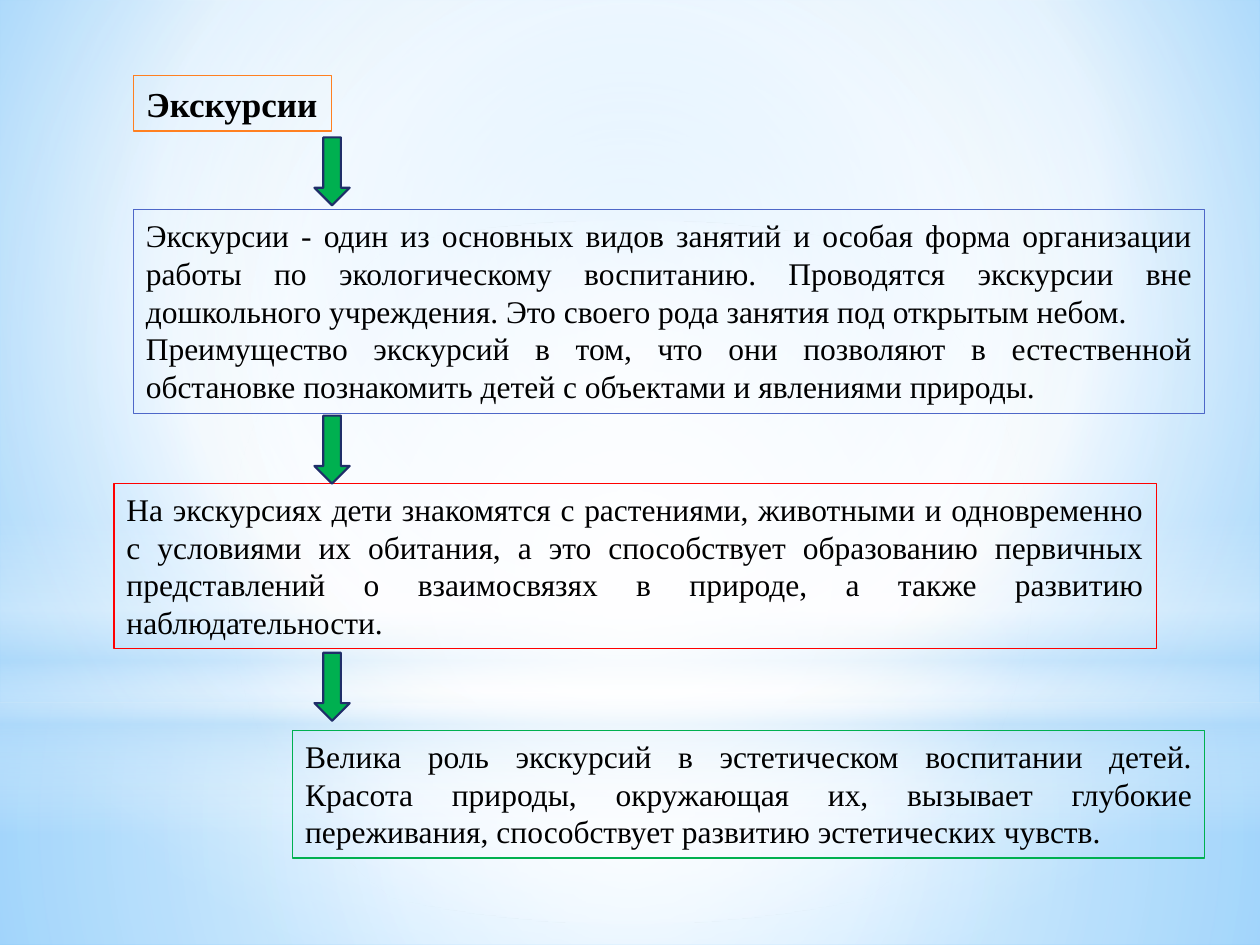
from dataclasses import dataclass

from lxml.etree import SubElement
from pptx import Presentation
from pptx.dml.color import RGBColor
from pptx.enum.shapes import MSO_SHAPE
from pptx.enum.text import MSO_ANCHOR, MSO_AUTO_SIZE, PP_ALIGN
from pptx.oxml.ns import qn
from pptx.util import Cm, Pt

FONT = "Times New Roman"
WIDTH, HEIGHT = 25.4, 19.05
ARROW_LEFT, ARROW_WIDTH, ARROW_HEIGHT = 6.34, 0.71, 1.37
ARROW_TOPS = (2.77, 8.38, 13.16)
CENTRE = (50, 50, 50, 50)


@dataclass
class Gradient:
    stops: list[tuple]  # position, colour and opacity, in percent
    focus: tuple | None = CENTRE  # None makes it linear, top to bottom


@dataclass
class Glow:
    shape: MSO_SHAPE
    top: float
    height: float
    gradient: Gradient


@dataclass
class Box:
    left: float
    top: float
    width: float
    height: float
    line: str
    paragraphs: list[str]


BACKGROUND = Gradient([(0, "9ED5FF", 100), (60, "FFFFFF", 100), (100, "5BB9FF", 100)],
                      (20, 10, 20, 60))

GLOWS = [
    Glow(MSO_SHAPE.RECTANGLE, 14.17, 4.88,
         Gradient([(0, "FFFFFF", 91), (37, "FFFFFF", 76), (100, "B4DCFA", 79)])),
    Glow(MSO_SHAPE.RECTANGLE, 0, 14.17,
         Gradient([(0, "FFFFFF", 89), (48, "FFFFFF", 62), (100, "B4DCFA", 79)])),
    Glow(MSO_SHAPE.RECTANGLE, 10.46, 6.35,
         Gradient([(0, "FFFFFF", 0), (29, "FFFFFF", 30), (45, "B4DCFA", 40),
                   (55, "FFFFFF", 26), (65, "B4DCFA", 60), (100, "FFFFFF", 0)], None)),
    Glow(MSO_SHAPE.OVAL, 4.45, 14.17,
         Gradient([(0, "FFFFFF", 100), (56, "FFFFFF", 0)])),
]

TITLE = Box(2.69, 1.52, 3.99, 1.12, "FF8021", ["Экскурсии"])

BOXES = [
    Box(2.69, 4.23, 21.6, 4.11, "4E67C8", [
        "Экскурсии - один из основных видов занятий и особая форма организации "
        "работы по экологическому воспитанию. Проводятся экскурсии вне "
        "дошкольного учреждения. Это своего рода занятия под открытым небом.",
        "Преимущество экскурсий в том, что они позволяют в естественной "
        "обстановке познакомить детей с объектами и явлениями природы."]),
    Box(2.3, 9.75, 21.01, 3.33, "FF0000", [
        "На экскурсиях дети знакомятся с растениями, животными и одновременно "
        "с условиями их обитания, а это способствует образованию первичных "
        "представлений о взаимосвязях в природе, а также развитию "
        "наблюдательности."]),
    Box(5.9, 14.73, 18.39, 2.57, "00B050", [
        "Велика роль экскурсий в эстетическом воспитании детей. "
        "Красота природы, окружающая их, вызывает глубокие "
        "переживания, способствует развитию эстетических чувств."]),
]

# Formats of the title and of the text boxes
TITLE_FRAME = {"word_wrap": False, "auto_size": MSO_AUTO_SIZE.NONE,
               "vertical_anchor": MSO_ANCHOR.MIDDLE}
TITLE_FONT = {"name": FONT, "size": Pt(20), "bold": True}
BOX_FRAME = {"word_wrap": True, "auto_size": MSO_AUTO_SIZE.SHAPE_TO_FIT_TEXT,
             "vertical_anchor": MSO_ANCHOR.TOP}
BOX_FONT = {"name": FONT, "size": Pt(18)}


def rgb(colour: str) -> RGBColor:
    return RGBColor.from_string(colour)


def set_all(target, values: dict) -> None:
    for name, value in values.items():
        setattr(target, name, value)


def set_gradient(fill, owner, gradient: Gradient) -> None:
    """Fill with a gradient that has opacity and a focus."""
    fill.gradient()
    grad = next(owner.iter(qn("a:gradFill")))
    for child in list(grad):
        grad.remove(child)
    stops = SubElement(grad, qn("a:gsLst"))
    for position, colour, opacity in gradient.stops:
        stop = SubElement(stops, qn("a:gs"), pos=str(position * 1000))
        clr = SubElement(stop, qn("a:srgbClr"), val=colour)
        if opacity < 100:
            SubElement(clr, qn("a:alpha"), val=str(opacity * 1000))
    if gradient.focus is None:
        SubElement(grad, qn("a:lin"), ang="5400000", scaled="0")
    else:
        path = SubElement(grad, qn("a:path"), path="circle")
        sides = {k: str(v * 1000) for k, v in zip("ltrb", gradient.focus)}
        SubElement(path, qn("a:fillToRect"), sides)


def set_line(sp, colour: str, width: float) -> None:
    sp.line.color.rgb = rgb(colour)
    sp.line.width = Pt(width)


def add_glow(s, glow: Glow) -> None:
    sp = s.shapes.add_shape(glow.shape, 0, Cm(glow.top), Cm(WIDTH), Cm(glow.height))
    sp.shadow.inherit = False
    sp.line.fill.background()
    set_gradient(sp.fill, sp.element, glow.gradient)


def add_arrow(s, top: float) -> None:
    sp = s.shapes.add_shape(MSO_SHAPE.DOWN_ARROW, Cm(ARROW_LEFT), Cm(top),
                            Cm(ARROW_WIDTH), Cm(ARROW_HEIGHT))
    sp.shadow.inherit = False
    sp.fill.solid()
    sp.fill.fore_color.rgb = rgb("00B050")
    set_line(sp, "1F2E69", 1.25)


def format_box(sp, box: Box, align: PP_ALIGN, frame: dict, font: dict) -> None:
    """Place a text shape, outline it and write its paragraphs."""
    set_all(sp, {name: Cm(getattr(box, name))
                 for name in ("left", "top", "width", "height")})
    set_line(sp, box.line, 0.75)
    tf = sp.text_frame
    set_all(tf, frame)
    for i, text in enumerate(box.paragraphs):
        p = tf.add_paragraph() if i else tf.paragraphs[0]
        p.alignment = align
        r = p.add_run()
        r.text = text
        r.font.color.rgb = rgb("000000")
        set_all(r.font, font)


def main() -> None:
    prs = Presentation()
    prs.slide_width, prs.slide_height = Cm(WIDTH), Cm(HEIGHT)
    s = prs.slides.add_slide(prs.slide_layouts[5])

    # Background and its soft glows
    set_gradient(s.background.fill, s.element, BACKGROUND)
    for glow in GLOWS:
        add_glow(s, glow)

    # Title, brought in front of the glows
    title = s.shapes.title
    title.element.getparent().append(title.element)
    format_box(title, TITLE, PP_ALIGN.LEFT, TITLE_FRAME, TITLE_FONT)

    # Text boxes and the arrows between them
    for box in BOXES:
        sp = s.shapes.add_textbox(0, 0, 0, 0)
        format_box(sp, box, PP_ALIGN.JUSTIFY, BOX_FRAME, BOX_FONT)
    for top in ARROW_TOPS:
        add_arrow(s, top)

    prs.save("out.pptx")


if __name__ == "__main__":
    main()
